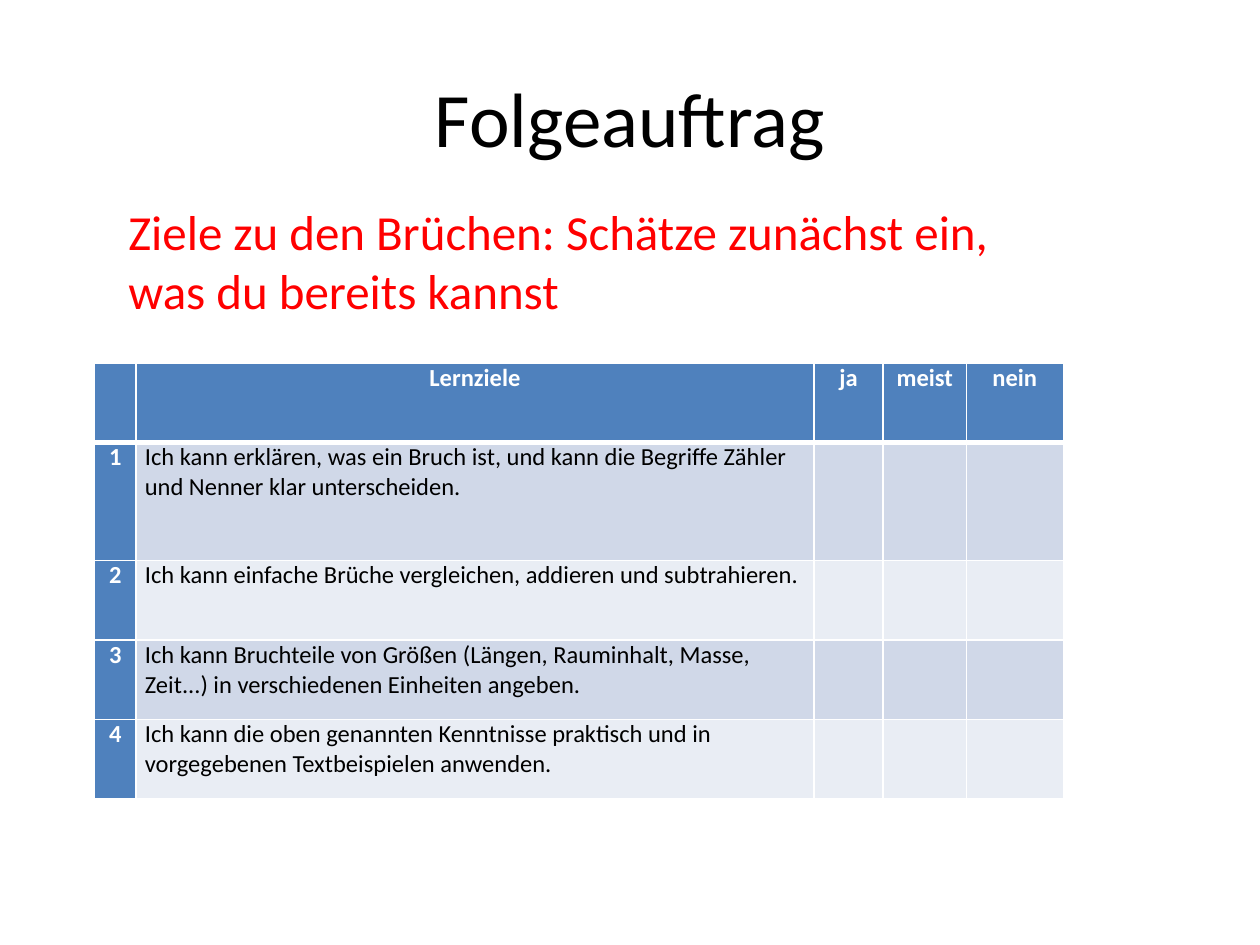
from dataclasses import dataclass

from lxml import etree
from pptx import Presentation
from pptx import util as u
from pptx.dml.color import RGBColor
from pptx.enum import text
from pptx.oxml import ns


@dataclass(frozen=True)
class Theme:
    font: str = "Calibri"
    black: str = "000000"
    white: str = "FFFFFF"
    red: str = "FF0000"
    header: str = "4F81BD"
    bands: tuple = ("D0D8E8", "E9EDF4")
    title_size: int = 44
    task_size: int = 28
    table_size: int = 14
    cell_spacing: int = 5
    thin_line: int = 1
    thick_line: int = 3


THEME = Theme()
CENTER = text.PP_ALIGN.CENTER
LEFT = text.PP_ALIGN.LEFT

HEADINGS = ["", "Lernziele", "ja", "meist", "nein"]
GOALS = [
    "Ich kann erklären, was ein Bruch ist, und kann die Begriffe Zähler "
    "und Nenner klar unterscheiden.",
    "Ich kann einfache Brüche vergleichen, addieren und subtrahieren.",
    "Ich kann Bruchteile von Größen (Längen, Rauminhalt, Masse, Zeit...) "
    "in verschiedenen Einheiten angeben.",
    "Ich kann die oben genannten Kenntnisse praktisch und in "
    "vorgegebenen Textbeispielen anwenden.",
]
COLUMN_WIDTHS = [0.33, 5.38, 0.55, 0.66, 0.77]
ROW_HEIGHTS = [0.63, 0.94, 0.63, 0.63, 0.63]


def style_paragraph(para, size, color, align, bold=False):
    para.alignment = align
    for span in para.runs:
        span.font.name = THEME.font
        span.font.size = u.Pt(size)
        span.font.bold = bold
        span.font.color.rgb = RGBColor.from_string(color)


def add_text(page, area, wording, size, color, align, anchor):
    box = page.shapes.add_textbox(*map(u.Inches, area))
    frame = box.text_frame
    frame.word_wrap = True
    frame.vertical_anchor = anchor
    frame.text = wording
    style_paragraph(frame.paragraphs[0], size, color, align)


def set_borders(cell, top, bottom):
    properties = cell._tc.get_or_add_tcPr()
    widths = {"lnL": THEME.thin_line, "lnR": THEME.thin_line,
              "lnT": top, "lnB": bottom}
    for side, width in widths.items():
        line = etree.SubElement(properties, ns.qn(f"a:{side}"), w=str(u.Pt(width)))
        fill = etree.SubElement(line, ns.qn("a:solidFill"))
        etree.SubElement(fill, ns.qn("a:srgbClr"), val=THEME.white)


def fill_cell(cell, wording, fill, color, align, bold):
    cell.fill.solid()
    cell.fill.fore_color.rgb = RGBColor.from_string(fill)
    if not wording:
        return
    cell.margin_left = cell.margin_right = u.Inches(0.07)
    cell.margin_top = cell.margin_bottom = 0
    cell.text_frame.text = wording
    para = cell.text_frame.paragraphs[0]
    para.space_before = para.space_after = u.Pt(THEME.cell_spacing)
    style_paragraph(para, THEME.table_size, color, align, bold)


def add_goal_table(page, left, top):
    rows = [HEADINGS] + [[str(number), goal, "", "", ""]
                         for number, goal in enumerate(GOALS, 1)]
    frame = page.shapes.add_table(
        len(rows), len(HEADINGS), u.Inches(left), u.Inches(top),
        u.Inches(sum(COLUMN_WIDTHS)), u.Inches(sum(ROW_HEIGHTS)))
    table = frame.table
    table.first_row = table.horz_banding = False
    for column, width in zip(table.columns, COLUMN_WIDTHS):
        column.width = u.Inches(width)
    for row, height in zip(table.rows, ROW_HEIGHTS):
        row.height = u.Inches(height)

    for r, wordings in enumerate(rows):
        # A thick line separates the headings from the goals
        above = THEME.thick_line if r == 1 else THEME.thin_line
        below = THEME.thick_line if r == 0 else THEME.thin_line
        for c, wording in enumerate(wordings):
            cell = table.cell(r, c)
            set_borders(cell, above, below)
            if r == 0 or c == 0:
                fill_cell(cell, wording, THEME.header, THEME.white, CENTER, True)
            else:
                band = THEME.bands[(r - 1) % 2]
                fill_cell(cell, wording, band, THEME.black, LEFT, False)


def main():
    deck = Presentation()
    deck.slide_width, deck.slide_height = u.Inches(10), u.Inches(7.5)
    page = deck.slides.add_slide(deck.slide_layouts[6])

    # Title and task
    add_text(page, (0.5, 0.3, 9, 1.25), "Folgeauftrag", THEME.title_size,
             THEME.black, CENTER, text.MSO_ANCHOR.MIDDLE)
    add_text(page, (0.92, 1.55, 7.48, 1.04),
             "Ziele zu den Brüchen: Schätze zunächst ein, was du bereits kannst",
             THEME.task_size, THEME.red, LEFT, text.MSO_ANCHOR.TOP)

    # Self-assessment table
    add_goal_table(page, 0.75, 2.88)

    deck.save("out.pptx")


if __name__ == "__main__":
    main()
